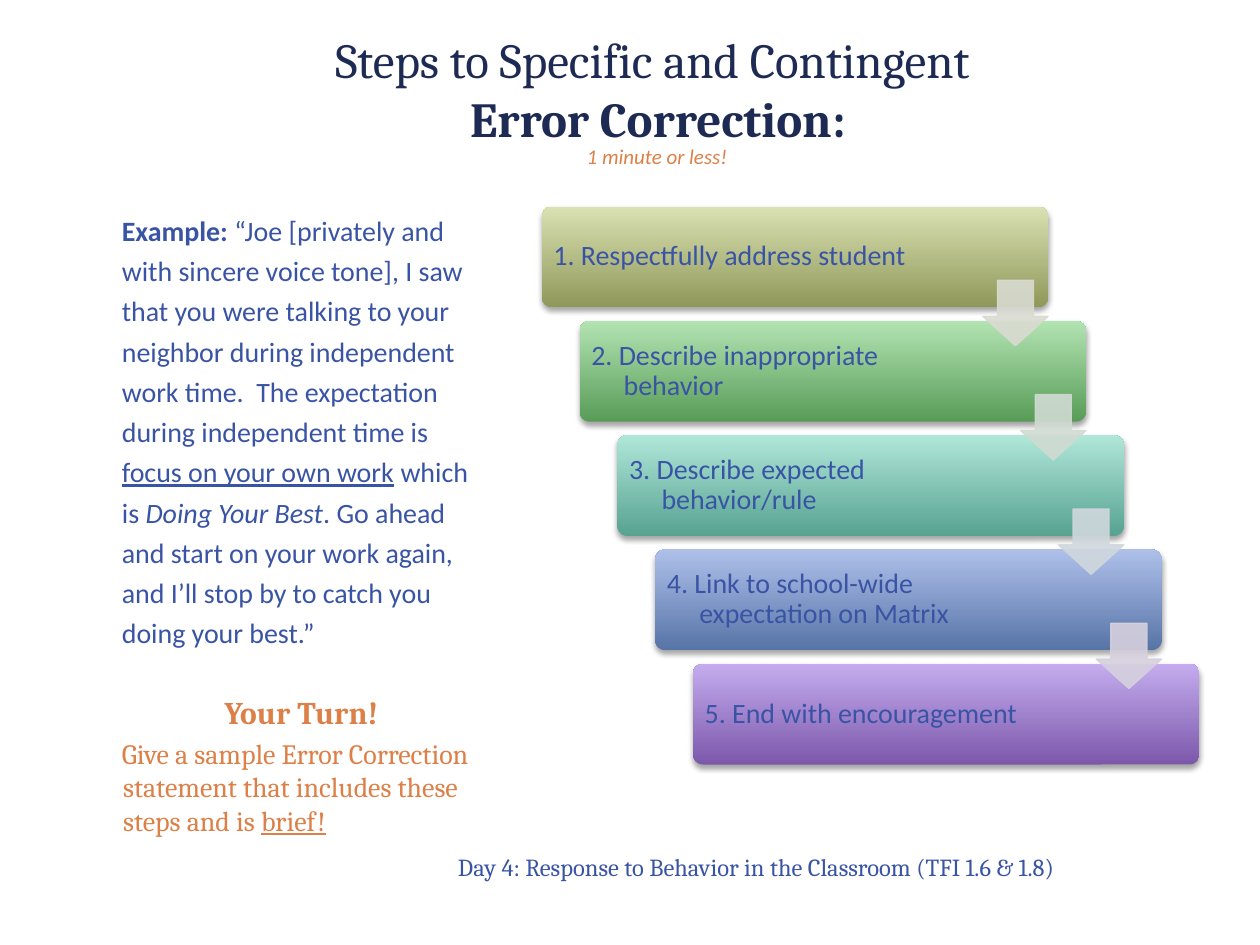
"""Build the slide on the steps to specific and contingent error correction."""
from copy import deepcopy

from lxml.etree import SubElement
from pptx import Presentation
from pptx.dml.color import RGBColor
from pptx.enum.shapes import MSO_SHAPE as SHAPE
from pptx.enum.text import MSO_ANCHOR as ANCHOR, PP_ALIGN as ALIGN
from pptx.oxml import parse_xml
from pptx.oxml.ns import nsdecls, qn
from pptx.util import Pt

NAVY = RGBColor(0x1D, 0x2A, 0x53)
BLUE = RGBColor(0x3A, 0x54, 0xA5)
ORANGE = RGBColor(0xDD, 0x80, 0x47)
STEPS = [
    ("1. Respectfully address student",
     RGBColor(0x8F, 0x98, 0x59), RGBColor(0xDA, 0xE1, 0xB3)),
    ("2. Describe inappropriate behavior",
     RGBColor(0x59, 0x9C, 0x58), RGBColor(0xB2, 0xE3, 0xB2)),
    ("3. Describe expected behavior/rule",
     RGBColor(0x57, 0xA2, 0x91), RGBColor(0xB0, 0xE7, 0xD9)),
    ("4. Link to school-wide expectation on Matrix",
     RGBColor(0x57, 0x74, 0xA7), RGBColor(0xAE, 0xC0, 0xEA)),
    ("5. End with encouragement",
     RGBColor(0x7C, 0x58, 0xAB), RGBColor(0xC4, 0xAC, 0xEE)),
]
ARROW_COLORS = [RGBColor(0xD9, 0xDB, 0xD1), RGBColor(0xD0, 0xDB, 0xD2),
                RGBColor(0xD0, 0xD8, 0xDD), RGBColor(0xD6, 0xD0, 0xDE)]
STEP_X, STEP_Y = 21.6, 65.3
SHADOW = (f'<a:effectLst {nsdecls("a")}><a:outerShdw blurRad="{Pt(3.1)}" dist="{Pt(1.8)}" '
          'dir="5400000" rotWithShape="0"><a:srgbClr val="000000"><a:alpha val="35000"/>'
          '</a:srgbClr></a:outerShdw></a:effectLst>')

prs = Presentation()
prs.slide_width, prs.slide_height = Pt(720), Pt(540)
slide = prs.slides.add_slide(prs.slide_layouts[5])
shapes = slide.shapes


def add_box(left, top, width, height):
    frame = shapes.add_textbox(Pt(left), Pt(top), Pt(width), Pt(height)).text_frame
    frame.word_wrap = True
    return frame


def write(paragraph, text, face, size, color, bold=False, italic=False, underline=False):
    run = paragraph.add_run()
    run.text = text
    font = run.font
    font.name, font.size, font.color.rgb = face, Pt(size), color
    font.bold, font.italic, font.underline = bold, italic, underline
    return run


footer = add_box(221, 483.1, 388.8, 58.3).paragraphs[0]
footer.alignment = ALIGN.RIGHT
write(footer, "Day 4: Response to Behavior in the Classroom (TFI 1.6 & 1.8)", "Cambria", 14, BLUE)

for i, (step, dark, light) in enumerate(STEPS):
    left, top = 309.6 + i * STEP_X, 118.1 + i * STEP_Y
    bar = shapes.add_shape(SHAPE.ROUNDED_RECTANGLE, Pt(left), Pt(top), Pt(289.4), Pt(57.6))
    bar.adjustments[0] = 0.1
    bar.fill.gradient()
    bar.fill.gradient_angle = 90
    for stop, color in zip(bar.fill.gradient_stops, (dark, light)):
        stop.color.rgb = color
    bar.line.fill.background()
    bar._element.spPr.append(parse_xml(SHADOW))

    label = add_box(left + 1.7, top + 1.7, 226.8 if i else 221, 54)
    label.vertical_anchor = ANCHOR.MIDDLE
    label.margin_left = label.margin_right = label.margin_top = label.margin_bottom = Pt(5)
    line = label.paragraphs[0]
    line.line_spacing = 0.9
    if i:
        properties = line._p.get_or_add_pPr()
        properties.set("marL", str(Pt(18.5)))
        properties.set("indent", str(-Pt(18.5)))
    write(line, step, "Calibri", 16, BLUE)

for i, color in enumerate(ARROW_COLORS):
    arrow = shapes.add_shape(SHAPE.DOWN_ARROW, Pt(561.6 + i * STEP_X), Pt(160.2 + i * STEP_Y),
                             Pt(37.4), Pt(37.4))
    arrow.adjustments[0], arrow.adjustments[1] = 0.55, 0.45
    arrow.shadow.inherit = False
    arrow.fill.solid()
    arrow.fill.fore_color.rgb = color
    arrow.line.color.rgb = color
    arrow.line.width = Pt(0.75)
    for tint in arrow._element.spPr.iter(qn("a:srgbClr")):
        SubElement(tint, qn("a:alpha")).set("val", "90000")

title = shapes.title
title.left, title.top, title.width, title.height = Pt(100.8), Pt(22.3), Pt(550.1), Pt(56.9)
title.text_frame.vertical_anchor = ANCHOR.MIDDLE
heading = title.text_frame.paragraphs[0]
heading.alignment = ALIGN.CENTER
opening = write(heading, "Steps to Specific and Contingent ", "Cambria", 28, NAVY)
heading.add_line_break()
heading._p.find(qn("a:br")).append(deepcopy(opening.font._element))
write(heading, "Error Correction:", "Cambria", 28, NAVY, bold=True)

task = add_box(62.6, 392.4, 223.2, 118.1)
your_turn = task.paragraphs[0]
your_turn.alignment = ALIGN.CENTER
your_turn._p.get_or_add_pPr().set("marL", str(Pt(32.4)))
your_turn._p.get_or_add_pPr().set("indent", str(-Pt(32.4)))
write(your_turn, "Your Turn! ", "Cambria", 18, ORANGE, bold=True)
prompt = task.add_paragraph()
prompt.space_before = Pt(3.2)
prompt._p.get_or_add_pPr().set("marL", str(Pt(0.7)))
prompt._p.get_or_add_pPr().set("indent", str(-Pt(0.7)))
write(prompt, "Give a sample Error Correction statement that includes these steps and is ",
      "Cambria", 16, ORANGE)
write(prompt, "brief!", "Cambria", 16, ORANGE, underline=True)

time_limit = add_box(285.8, 78.5, 179.3, 21.6).paragraphs[0]
time_limit.alignment = ALIGN.CENTER
write(time_limit, "1 minute or less!", "Calibri", 12, ORANGE, italic=True)

example = add_box(62.6, 114.5, 223.2, 263.5).paragraphs[0]
example.line_spacing = 1.2
for text, style in [
    ("Example: ", {"bold": True}),
    ("“Joe [privately and with sincere voice tone], I saw that you were talking to your "
     "neighbor during independent work time.  The expectation during independent time is ", {}),
    ("focus on your own work", {"underline": True}),
    (" which is ", {}),
    ("Doing Your Best", {"italic": True}),
    (". Go ahead and start on your work again, and I’ll stop by to catch you "
     "doing your best.”", {}),
]:
    write(example, text, "Calibri", 16, BLUE, **style)

prs.save("out.pptx")
